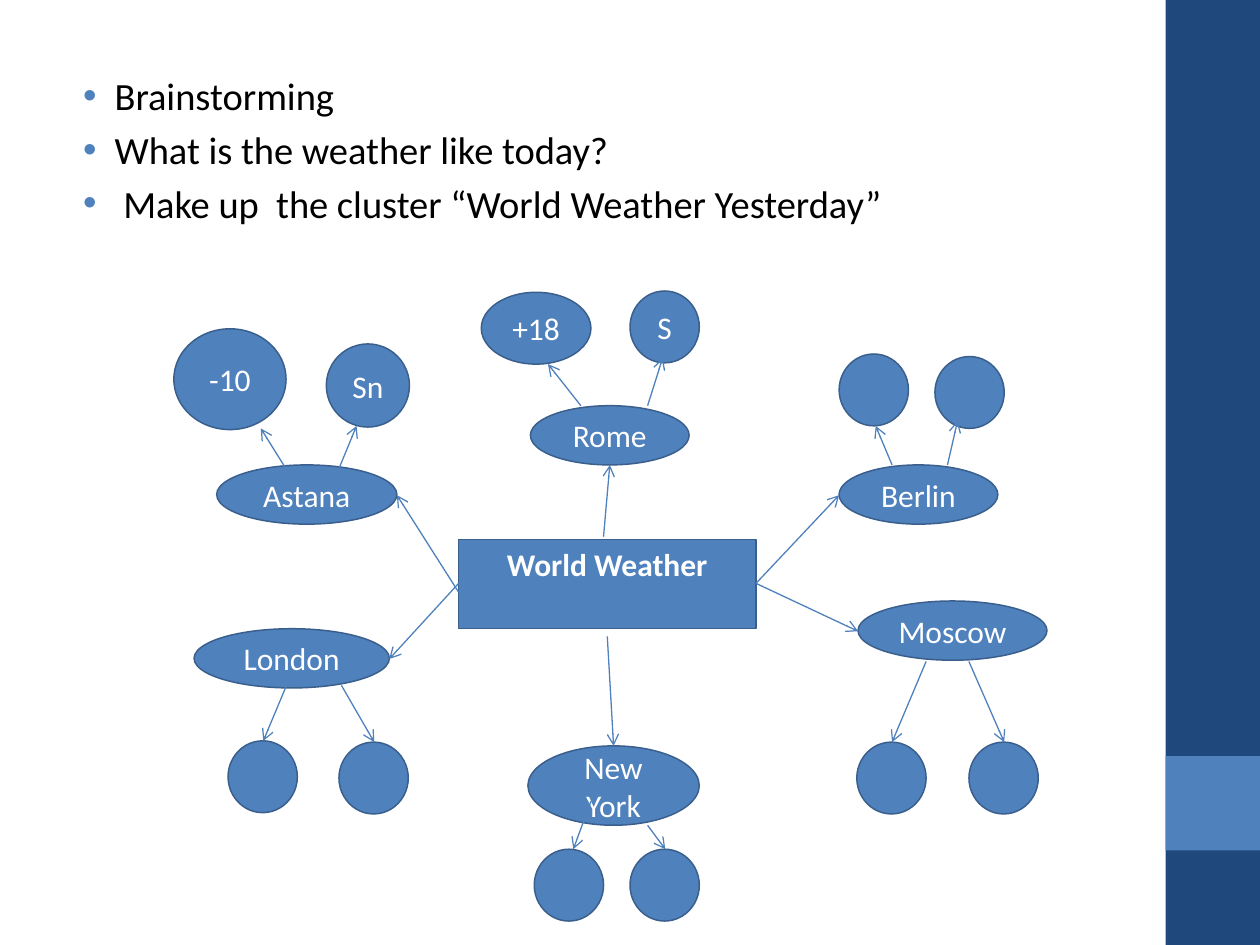
"""Build the "World Weather" brainstorming cluster slide."""
import pptx
import pptx.chart.data
import pptx.dml.color
import pptx.enum.shapes
import pptx.enum.text
import pptx.oxml
import pptx.oxml.ns
import pptx.util
from lxml import etree

Inches = pptx.util.Inches
Pt = pptx.util.Pt
SHAPE = pptx.enum.shapes.MSO_SHAPE
COLORS = {"navy": "1F497D", "blue": "4F81BD", "edge": "3A5F8C", "black": "000000", "white": "FFFFFF"}


def rgb(name):
    return pptx.dml.color.RGBColor.from_string(COLORS[name])


def add_node(page, kind, place, fill, edge=None, label="", bold=False):
    node = page.shapes.add_shape(kind, *[Inches(length) for length in place])
    node.shadow.inherit = False
    node.fill.solid()
    node.fill.fore_color.rgb = rgb(fill)
    if edge:
        node.line.color.rgb = rgb(edge)
        node.line.width = Pt(0.85)
    else:
        node.line.fill.background()
    if label:
        node.text_frame.text = label
        node.text_frame.word_wrap = True
        node.text_frame.vertical_anchor = pptx.enum.text.MSO_ANCHOR.MIDDLE
        para = node.text_frame.paragraphs[0]
        para.alignment = pptx.enum.text.PP_ALIGN.CENTER
        font = para.runs[0].font
        font.name, font.size, font.bold = "Calibri", Pt(18), bold
        font.color.rgb = rgb("white")
    return node


deck = pptx.Presentation()
deck.slide_width, deck.slide_height = Inches(10), Inches(7.5)
page = deck.slides.add_slide(deck.slide_layouts[1])
title = page.shapes.title
title.element.getparent().remove(title.element)

add_node(page, SHAPE.RECTANGLE, (9.25, 0, 0.75, 7.5), "navy")
add_node(page, SHAPE.RECTANGLE, (9.25, 6, 0.75, 0.75), "blue")

tasks = ["Brainstorming", "What is the weather like today?", " Make up  the cluster “World Weather Yesterday”"]
body = page.placeholders[1]
body.left, body.top, body.width, body.height = Inches(0.43), Inches(0.52), Inches(8.4), Inches(6.98)
body.text_frame.text = "\n".join(tasks)
for para in body.text_frame.paragraphs:
    para.space_before = Pt(4.4)
    properties = para._p.get_or_add_pPr()
    properties.set("marL", str(Inches(0.38)))
    properties.set("indent", str(Inches(-0.25)))
    bullet_color = etree.SubElement(properties, pptx.oxml.ns.qn("a:buClr"))
    etree.SubElement(bullet_color, pptx.oxml.ns.qn("a:srgbClr"), val=COLORS["blue"])
    etree.SubElement(properties, pptx.oxml.ns.qn("a:buFont"), typeface="Arial")
    etree.SubElement(properties, pptx.oxml.ns.qn("a:buChar"), char="•")
    font = para.runs[0].font
    font.name, font.size = "Calibri", Pt(22)
    font.color.rgb = rgb("black")

center = add_node(page, SHAPE.FLOWCHART_PROCESS, (3.64, 4.28, 2.36, 0.71), "blue", "edge", "World Weather", True)
center.text_frame.vertical_anchor = pptx.enum.text.MSO_ANCHOR.TOP

cities = [
    ("Astana", 1.72, 3.69, 1.43, 0.47),
    ("Berlin", 6.66, 3.69, 1.26, 0.47),
    ("Rome", 4.21, 3.22, 1.26, 0.47),
    ("Moscow", 6.81, 4.77, 1.5, 0.47),
    ("New York", 4.19, 5.92, 1.36, 0.63),
    ("London", 1.54, 4.99, 1.55, 0.47),
]
for city, *place in cities:
    add_node(page, SHAPE.OVAL, place, "blue", "edge", city)

readings = [
    ("-10", 1.38, 2.61, 0.89, 0.8),
    ("Sn", 2.59, 2.73, 0.66, 0.66),
    ("S", 5, 2.31, 0.55, 0.57),
    ("+18", 3.82, 2.32, 0.87, 0.57),
]
blank_spots = [(5, 6.74), (4.24, 6.74), (6.8, 5.89), (7.69, 5.89), (7.42, 2.83), (6.66, 2.81), (2.69, 5.89), (1.81, 5.88)]
readings += [("", left, top, 0.55, 0.57) for left, top in blank_spots]
for reading, *place in readings:
    add_node(page, SHAPE.FLOWCHART_CONNECTOR, place, "blue", "edge", reading)

center_arrows = [
    (4.79, 4.26, 4.84, 3.69),
    (3.64, 4.7, 3.15, 3.93),
    (3.64, 4.63, 3.09, 5.23),
    (6, 4.63, 6.66, 3.93),
    (6, 4.63, 6.81, 5.01),
    (4.82, 5.05, 4.87, 5.92),
]
city_arrows = [
    (2.27, 3.72, 2.07, 3.4), (2.69, 3.72, 2.83, 3.38),
    (4.61, 3.22, 4.35, 2.89), (5.14, 3.22, 5.26, 2.84),
    (7.08, 3.69, 6.95, 3.38), (7.52, 3.69, 7.6, 3.34),
    (7.35, 5.25, 7.08, 5.89), (7.69, 5.25, 7.97, 5.89),
    (4.69, 6.36, 4.55, 6.74), (5.14, 6.55, 5.28, 6.74),
    (2.27, 5.45, 2.09, 5.88), (2.71, 5.44, 2.97, 5.89),
]
for ends in center_arrows + city_arrows:
    arrow = page.shapes.add_connector(pptx.enum.shapes.MSO_CONNECTOR.STRAIGHT, *[Inches(length) for length in ends])
    arrow.line.color.rgb = rgb("blue")
    arrow.line.width = Pt(0.75)
    etree.SubElement(arrow.line._get_or_add_ln(), pptx.oxml.ns.qn("a:tailEnd"), type="arrow")
    etree.SubElement(arrow.element.spPr, pptx.oxml.ns.qn("a:effectLst"))

deck.save("out.pptx")
